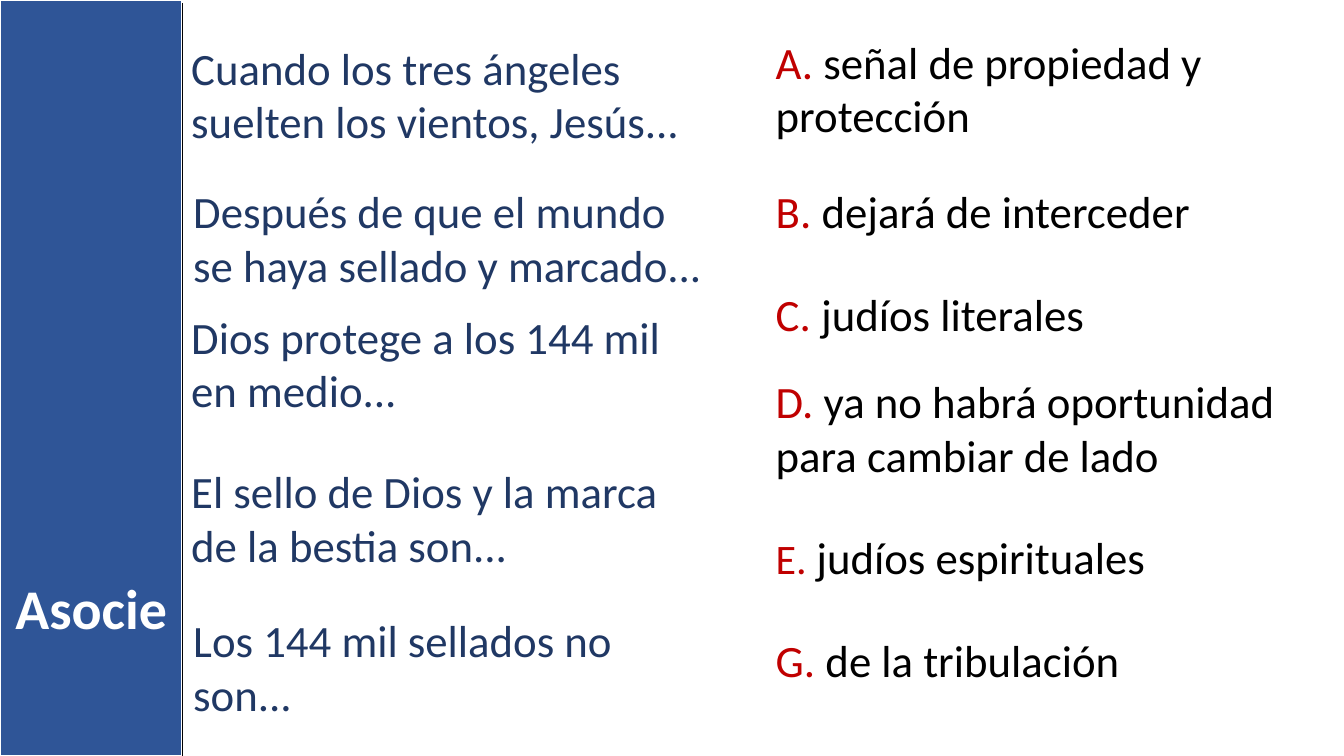
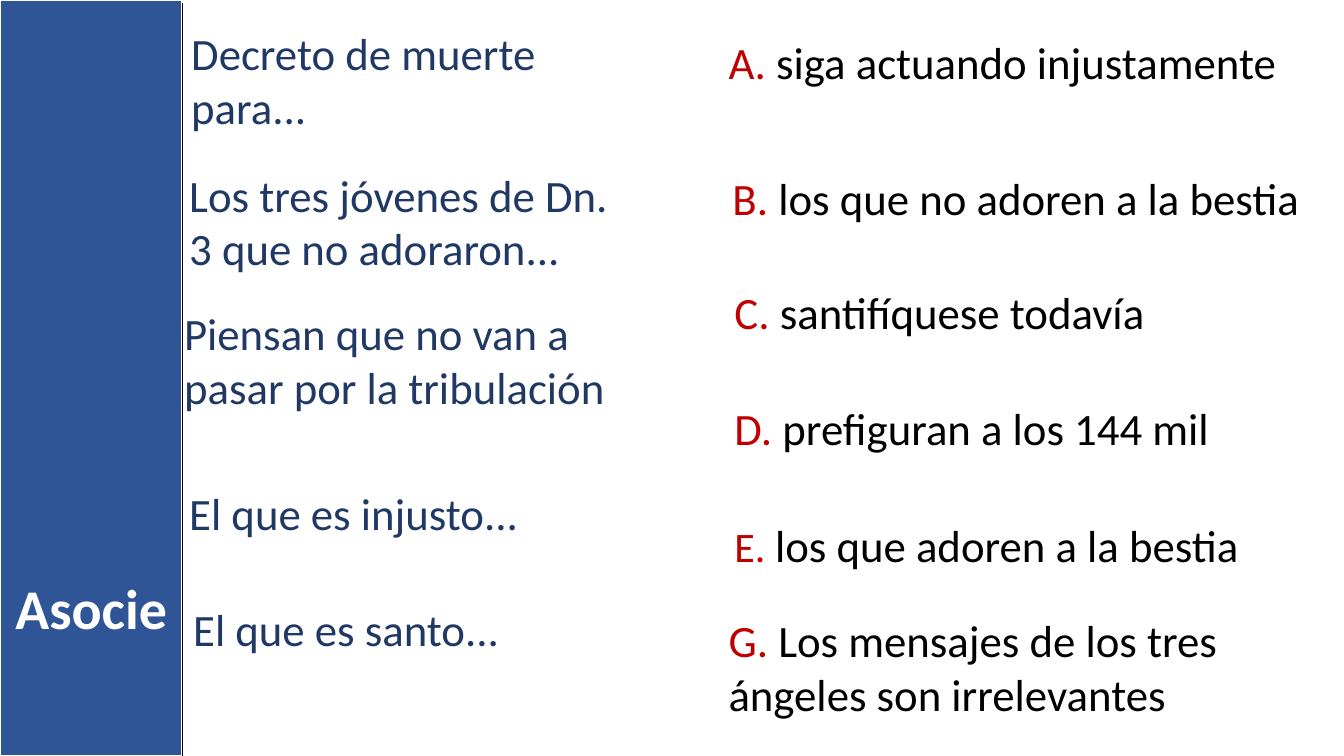
from dataclasses import dataclass

from lxml.etree import SubElement
from pptx import Presentation
from pptx.dml.color import RGBColor
from pptx.enum.shapes import MSO_CONNECTOR as Connector, MSO_SHAPE as Shape
from pptx.enum.text import MSO_ANCHOR as Anchor, MSO_AUTO_SIZE as AutoSize, PP_ALIGN as Align
from pptx.oxml.ns import qn
from pptx.util import Cm, Pt

# Shared style
FONT = "Calibri"
BAND, NAVY, RED, BLACK, WHITE = "2F5597", "203864", "C00000", "000000", "FFFFFF"
WIDTH, HEIGHT, BAND_W = 33.87, 19.05, 4.6
TITLE_ONLY = 5
BOX_HEIGHT = {1: 1.63, 2: 3.0}  # by number of text lines


@dataclass
class Prompt:
    text: str
    left: float
    top: float
    width: float
    lines: int = 2


@dataclass
class Answer:
    letter: str
    text: str
    left: float
    top: float
    width: float
    lines: int = 1
    letter_size: int = 32


@dataclass
class Exercise:
    prompts: list[Prompt]
    answers: list[Answer]


EXERCISES = [
    Exercise(
        [
            Prompt("Cuando los tres ángeles suelten los vientos, Jesús...", 4.57, 0.89, 13.11),
            Prompt("Después de que el mundo se haya sellado y marcado...", 4.62, 4.5, 13.61),
            Prompt("Dios protege a los 144 mil en medio...", 4.57, 7.67, 13.11),
            Prompt("El sello de Dios y la marca de la bestia son...", 4.57, 11.56, 12.73),
            Prompt("Los 144 mil sellados no son...", 4.62, 15.32, 11.2),
        ],
        [
            Answer("A", "señal de propiedad y protección", 19.3, 0.74, 14.17, lines=2),
            Answer("B", "dejará de interceder", 19.3, 4.5, 13.94),
            Answer("C", "judíos literales", 19.3, 7.11, 13.39),
            Answer("D", "ya no habrá oportunidad para cambiar de lado", 19.3, 9.3, 14.17, lines=2),
            Answer("E", "judíos espirituales", 19.3, 13.23, 13.94, letter_size=30),
            Answer("G", "de la tribulación", 19.3, 15.82, 13.2),
        ],
    ),
    Exercise(
        [
            Prompt("Decreto de muerte para...", 4.57, 0.53, 11.25),
            Prompt("Los tres jóvenes de Dn. 3 que no adoraron...", 4.52, 4.09, 11.73),
            Prompt("Piensan que no van a pasar por la tribulación", 4.39, 7.59, 11.43),
            Prompt("El que es injusto...", 4.52, 12.12, 11.68, lines=1),
            Prompt("El que es santo...", 4.62, 15.04, 11.2, lines=1),
        ],
        [
            Answer("A", "siga actuando injustamente", 18.11, 0.74, 15.37),
            Answer("B", "los que no adoren a la bestia", 18.21, 4.17, 15.04),
            Answer("C", "santifíquese todavía", 18.26, 7.06, 14.58),
            Answer("D", "prefiguran a los 144 mil", 18.26, 9.98, 14.73),
            Answer("E", "los que adoren a la bestia", 18.26, 12.93, 14.05, letter_size=30),
            Answer("G", "Los mensajes de los tres ángeles son irrelevantes", 18.11, 15.32, 14.2, lines=2),
        ],
    ),
]


def rgb(color: str) -> RGBColor:
    return RGBColor.from_string(color)


def add_text(p, text: str, *, color: str = BLACK, size: int = 32, bold: bool = False) -> None:
    r = p.add_run()
    r.text = text
    r.font.name, r.font.size, r.font.bold = FONT, Pt(size), bold
    r.font.color.rgb = rgb(color)


def add_box(slide, item: Prompt | Answer):
    """Add an empty text box for the item and return its first paragraph."""
    sp = slide.shapes.add_textbox(
        Cm(item.left), Cm(item.top), Cm(item.width), Cm(BOX_HEIGHT[item.lines])
    )
    tf = sp.text_frame
    tf.word_wrap, tf.auto_size = True, AutoSize.SHAPE_TO_FIT_TEXT
    return tf.paragraphs[0]


def add_band(slide) -> None:
    # Side band
    band = slide.shapes.add_shape(Shape.RECTANGLE, Cm(0), Cm(0), Cm(BAND_W), Cm(HEIGHT))
    band.shadow.inherit = False
    band.fill.solid()
    band.fill.fore_color.rgb = rgb(BAND)
    band.line.color.rgb, band.line.width = rgb(WHITE), Pt(1.5)

    # Title, brought in front of the band
    title = slide.shapes.title
    title.left, title.top, title.width, title.height = Cm(0), Cm(14.33), Cm(BAND_W), Cm(1.96)
    band.element.getparent().append(title.element)
    tf = title.text_frame
    tf.word_wrap, tf.auto_size, tf.vertical_anchor = True, AutoSize.NONE, Anchor.TOP
    p = tf.paragraphs[0]
    p.alignment = Align.CENTER
    add_text(p, "Asocie", color=WHITE, size=40, bold=True)

    # Edge line
    edge = slide.shapes.add_connector(
        Connector.STRAIGHT, Cm(BAND_W), Cm(0.08), Cm(BAND_W), Cm(HEIGHT)
    )
    edge.line.color.rgb, edge.line.width = rgb(BLACK), Pt(1)
    SubElement(edge.element.spPr, qn("a:effectLst"))


def add_exercise(prs, exercise: Exercise) -> None:
    slide = prs.slides.add_slide(prs.slide_layouts[TITLE_ONLY])
    add_band(slide)
    for prompt in exercise.prompts:
        add_text(add_box(slide, prompt), prompt.text, color=NAVY)
    for answer in exercise.answers:
        p = add_box(slide, answer)
        add_text(p, f"{answer.letter}. ", color=RED, size=answer.letter_size)
        add_text(p, answer.text)


def main() -> None:
    prs = Presentation()
    prs.slide_width, prs.slide_height = Cm(WIDTH), Cm(HEIGHT)
    for exercise in EXERCISES:
        add_exercise(prs, exercise)
    prs.save("out.pptx")


if __name__ == "__main__":
    main()
